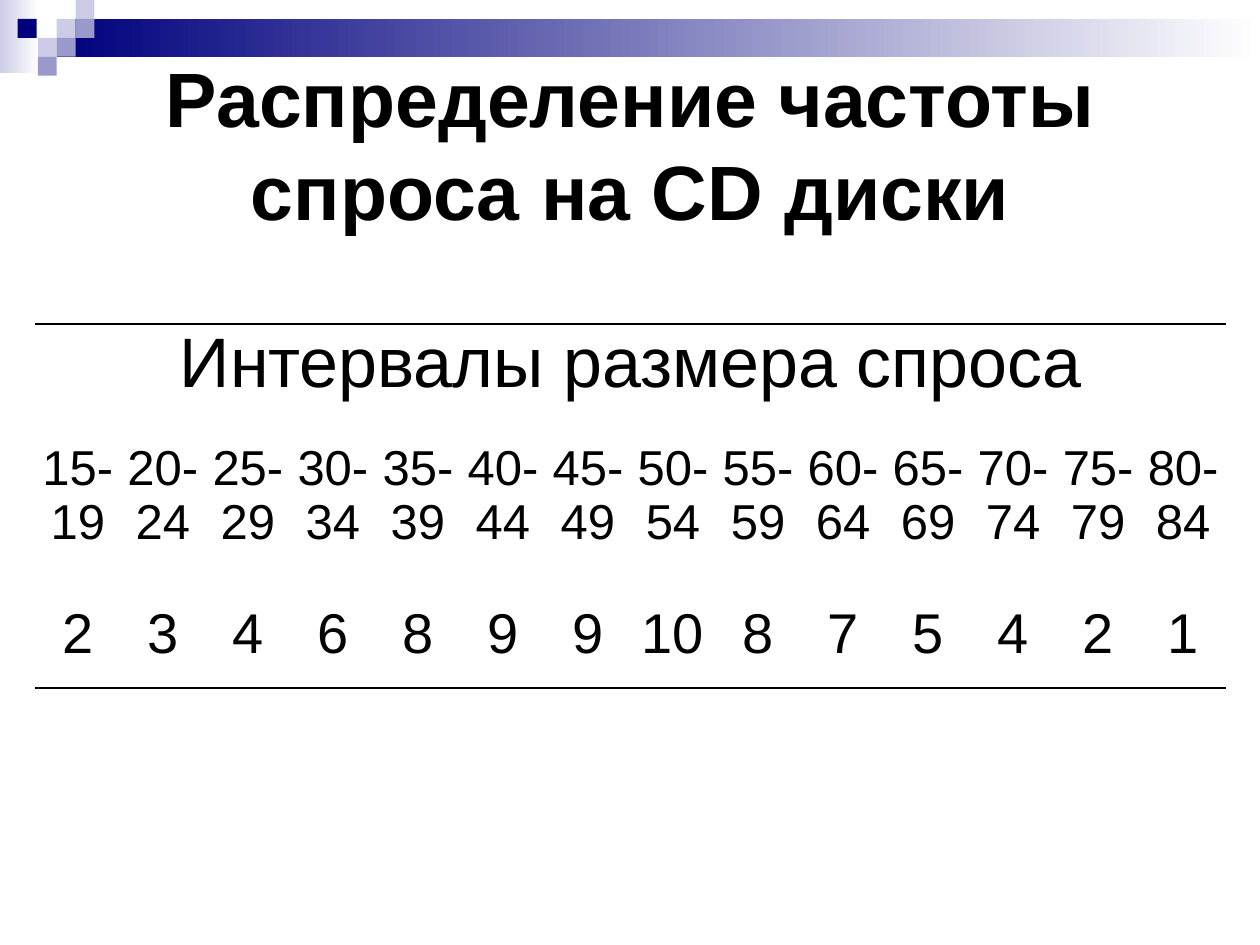
"""Build a slide with the demand frequency table for CD discs."""
from dataclasses import dataclass

from lxml.etree import SubElement as Sub
from pptx import Presentation
from pptx.dml.color import RGBColor as Rgb
from pptx.enum.shapes import MSO_SHAPE as Kind
from pptx.enum.text import MSO_ANCHOR as Anchor, PP_ALIGN as Align
from pptx.oxml.ns import qn
from pptx.util import Inches, Pt


@dataclass(frozen=True)
class Theme:
    font: str = "Arial"
    ink: str = "000000"
    white: str = "FFFFFF"
    navy: str = "00007D"
    mid: str = "9999CC"
    pale: str = "CCCCE6"
    title: int = 44
    head: int = 40
    span: int = 28
    count: int = 32
    rule: int = 1


THEME = Theme()
PLAIN = "{2D5ABB26-0587-4C30-8999-92F81FD0307C}"
COUNTS = [2, 3, 4, 6, 8, 9, 9, 10, 8, 7, 5, 4, 2, 1]
SPANS = [f"{low}-{low + 4}" for low in range(15, 85, 5)]
TILES = [
    (0.45, 0.15, THEME.pale), (0.6, 0, THEME.pale), (0.6, 0.15, THEME.mid),
    (0.3, 0.3, THEME.pale), (0.14, 0.15, THEME.navy),
    (0.45, 0.3, THEME.mid), (0.3, 0.45, THEME.mid),
]


def put(item, values):
    """Set each named attribute on the item."""
    for name, value in values.items():
        setattr(item, name, value)


def write(frame, text, size, bold=False):
    """Write one centred line of styled text."""
    para = frame.paragraphs[0]
    para.alignment = Align.CENTER
    run = para.add_run()
    run.text = text
    put(run.font, {"name": THEME.font, "size": Pt(size), "bold": bold})
    run.font.color.rgb = Rgb.from_string(THEME.ink)


def add_box(slide, box, color, fade=None):
    """Add a borderless box, plain or fading to the right."""
    shape = slide.shapes.add_shape(Kind.RECTANGLE, *map(Inches, box))
    shape.shadow.inherit = False
    shape.line.fill.background()
    if fade is None:
        shape.fill.solid()
        shape.fill.fore_color.rgb = Rgb.from_string(color)
        return
    shape.fill.gradient()
    shape.fill.gradient_angle = 0
    for stop, tone in zip(shape.fill.gradient_stops, (color, fade)):
        stop.color.rgb = Rgb.from_string(tone)


def add_band(slide):
    """Add the fading bars and the corner tiles."""
    add_box(slide, (0, 0, 0.31, 0.58), THEME.pale, THEME.white)
    add_box(slide, (0.45, 0.15, 9.55, 0.3), THEME.navy, THEME.white)
    for left, top, color in TILES:
        add_box(slide, (left, top, 0.15, 0.15), color)


def add_title(slide, text):
    """Place and fill the title."""
    title = slide.shapes.title
    put(title, {"left": Inches(0.28), "top": Inches(0.99),
                "width": Inches(9.45), "height": Inches(1.01)})
    put(title.text_frame, {"vertical_anchor": Anchor.BOTTOM, "word_wrap": True,
                           "margin_bottom": Inches(0.13)})
    write(title.text_frame, text, THEME.title, True)


def rule(cell, side):
    """Draw a border on one side of a cell."""
    props = cell._tc.get_or_add_tcPr()
    line = Sub(props, qn(f"a:{side}"), w=str(Pt(THEME.rule)))
    Sub(Sub(line, qn("a:solidFill")), qn("a:srgbClr"), val=THEME.ink)
    props.insert(0, line)


def add_grid(slide, head):
    """Add the table of intervals and counts."""
    size = len(SPANS)
    box = map(Inches, (0.28, 2.57, 9.45, 2.89))
    table = slide.shapes.add_table(3, size, *box).table
    put(table, {"first_row": False, "horz_banding": False})
    table._tbl.tblPr[0].text = PLAIN
    for col in table.columns:
        col.width = Inches(9.45 / size)
    for row, high in zip(table.rows, (0.93, 1.28, 0.68)):
        row.height = Inches(high)
    for cell in table.iter_cells():
        cell.fill.background()
        put(cell, {"margin_left": Inches(0.03), "margin_right": Inches(0.03),
                   "margin_top": 0, "margin_bottom": 0,
                   "vertical_anchor": Anchor.TOP})
    for col, (span, count) in enumerate(zip(SPANS, COUNTS)):
        write(table.cell(1, col).text_frame, span, THEME.span)
        write(table.cell(2, col).text_frame, str(count), THEME.count)
        rule(table.cell(0, col), "lnT")
        rule(table.cell(2, col), "lnB")
    table.cell(0, 0).merge(table.cell(0, size - 1))
    write(table.cell(0, 0).text_frame, head, THEME.head)


def main():
    """Build and save the slide."""
    deck = Presentation()
    put(deck, {"slide_width": Inches(10), "slide_height": Inches(7.5)})
    slide = deck.slides.add_slide(deck.slide_layouts[5])
    add_band(slide)
    add_title(slide, "Распределение частоты спроса на CD диски")
    add_grid(slide, "Интервалы размера спроса")
    deck.save("out.pptx")


if __name__ == "__main__":
    main()
